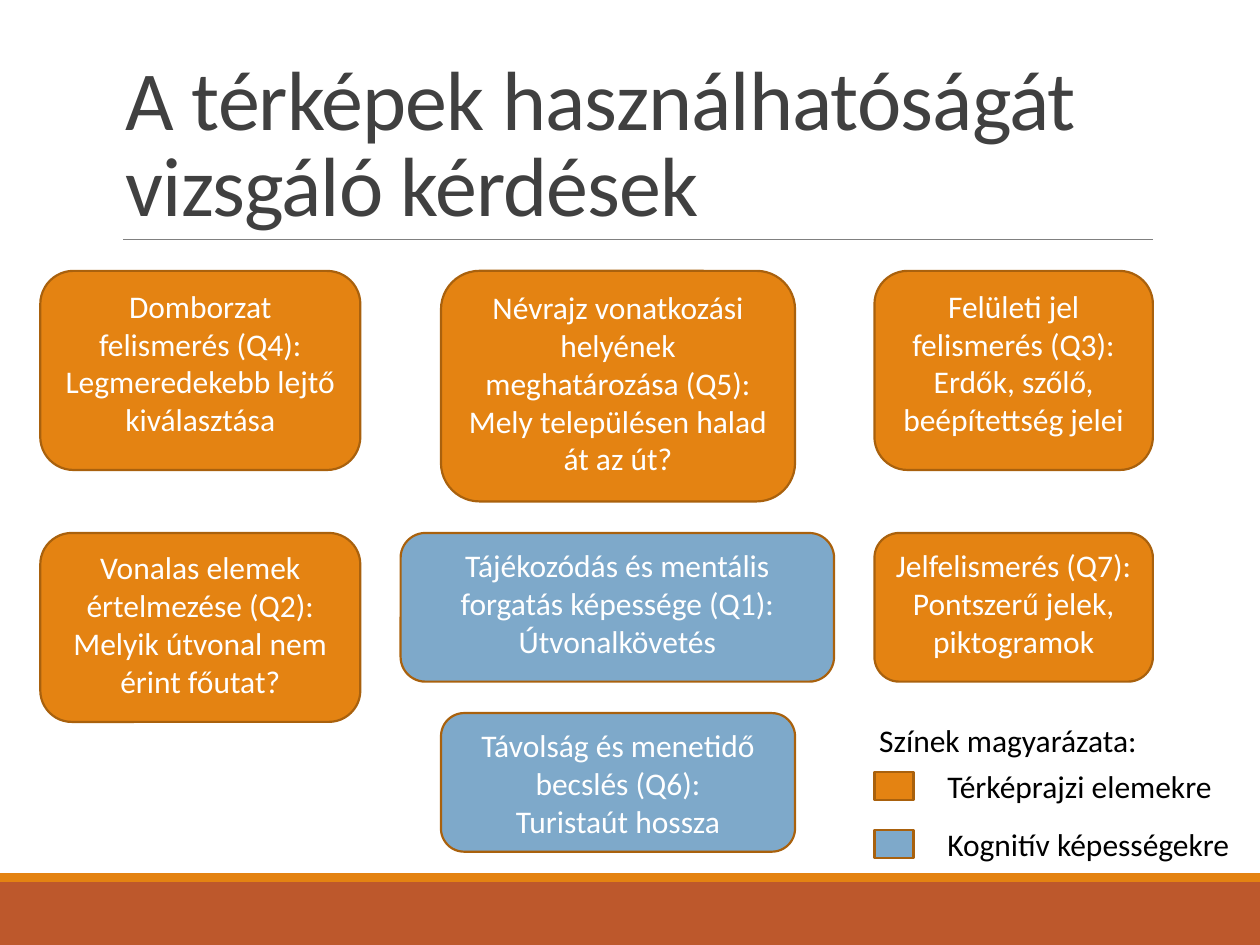
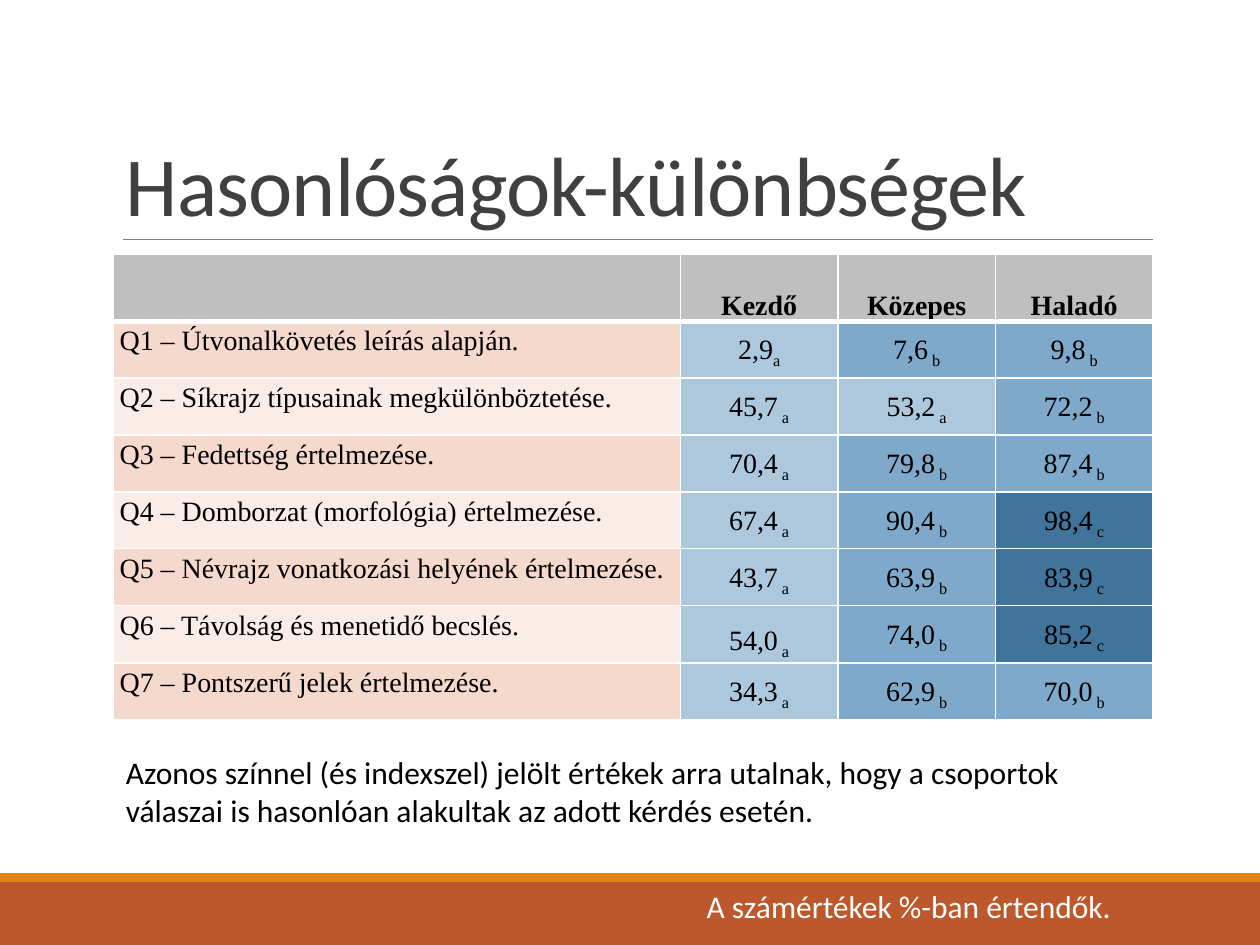
from dataclasses import dataclass

from lxml import etree
from pptx import Presentation
from pptx.dml.color import RGBColor
from pptx.enum.shapes import MSO_CONNECTOR, MSO_SHAPE
from pptx.enum.text import MSO_ANCHOR, MSO_AUTO_SIZE, PP_ALIGN
from pptx.oxml.ns import qn
from pptx.util import Pt

PX = 9144  # 100 px to the inch
RECT, ROUND = MSO_SHAPE.RECTANGLE, MSO_SHAPE.ROUNDED_RECTANGLE
LINE = MSO_CONNECTOR.STRAIGHT
TOP, MID, LOW = MSO_ANCHOR.TOP, MSO_ANCHOR.MIDDLE, MSO_ANCHOR.BOTTOM
LEFT, CENTER = PP_ALIGN.LEFT, PP_ALIGN.CENTER
GROW = MSO_AUTO_SIZE.SHAPE_TO_FIT_TEXT


@dataclass(frozen=True)
class Theme:
    sans: str = "Calibri"
    serif: str = "Times New Roman"
    big: int = 48
    body: int = 18
    cell: int = 16
    white: str = "FFFFFF"
    black: str = "000000"
    title: str = "404040"
    rule: str = "808080"
    rust: str = "BD582C"
    orange: str = "E48312"
    edge: str = "A9610D"
    blue: str = "7EA9CA"
    pale: str = "ADC8DD"
    deep: str = "40749B"
    head: str = "BFBFBF"
    odd: str = "F5D9CC"
    even: str = "FAEDE7"


T = Theme()
MAP, MIND = T.orange, T.blue
GROUPS = {"a": T.pale, "b": T.blue, "c": T.deep}

# left, top, width, height, fill, question, task
COLS = 0, 318, 662
ROWS = 0, 208, 351
CARDS = [
    (COLS[0], ROWS[0], 254, 158, MAP, "Domborzat felismerés (Q4):", "Legmeredekebb lejtő kiválasztása"),
    (COLS[1], ROWS[0], 281, 183, MAP, "Névrajz vonatkozási helyének meghatározása (Q5):",
     "Mely településen halad át az út?"),
    (COLS[2], ROWS[0], 221, 158, MAP, "Felületi jel felismerés (Q3):", "Erdők, szőlő, beépítettség jelei"),
    (COLS[0], ROWS[1], 254, 150, MAP, "Vonalas elemek értelmezése (Q2):", "Melyik útvonal nem érint főutat?"),
    (COLS[1] - 32, ROWS[1], 344, 118, MIND, "Tájékozódás és mentális forgatás képessége (Q1):",
     "Útvonalkövetés"),
    (COLS[2], ROWS[1], 221, 118, MAP, "Jelfelismerés (Q7):", "Pontszerű jelek, piktogramok"),
    (COLS[1], ROWS[2], 281, 110, MIND, "Távolság és menetidő becslés (Q6):", "Turistaút hossza"),
]
KEYS = [(MAP, "Térképrajzi elemekre", 232), (MIND, "Kognitív képességekre", 247)]

LEVELS = ["", "Kezdő", "Közepes", "Haladó"]
SCORES = [
    ("Q1 – Útvonalkövetés leírás alapján.", ("2,9", "a"), ("7,6", " b"), ("9,8", " b")),
    ("Q2 – Síkrajz típusainak megkülönböztetése.", ("45,7", " a"), ("53,2", " a"), ("72,2", " b")),
    ("Q3 – Fedettség értelmezése.", ("70,4", " a"), ("79,8", " b"), ("87,4", " b")),
    ("Q4 – Domborzat (morfológia) értelmezése.", ("67,4", " a"), ("90,4", " b"), ("98,4", " c")),
    ("Q5 – Névrajz vonatkozási helyének értelmezése.", ("43,7", " a"), ("63,9", " b"), ("83,9", " c")),
    ("Q6 – Távolság és menetidő becslés.", ("54,0", " a"), ("74,0", " b"), ("85,2", " c")),
    ("Q7 – Pontszerű jelek értelmezése.", ("34,3", " a"), ("62,9", " b"), ("70,0", " b")),
]


def rgb(hue):
    return RGBColor.from_string(hue)


def emu(*sizes):
    return [size * PX for size in sizes]


def style(para, size, hue, font=T.sans, align=LEFT, bold=False):
    para.alignment = align
    for run in para.runs:
        face = run.font
        face.name, face.size, face.bold = font, Pt(size), bold
        face.color.rgb = rgb(hue)


def block(slide, kind, box, fill, edge=None):
    shape = slide.shapes.add_shape(kind, *emu(*box))
    shape.shadow.inherit = False
    shape.fill.solid()
    shape.fill.fore_color.rgb = rgb(fill)
    if edge:
        shape.line.color.rgb = rgb(edge)
        shape.line.width = Pt(1.25)
    else:
        shape.line.fill.background()
    return shape


def label(slide, box, text, hue=T.black, wrap=True):
    frame = slide.shapes.add_textbox(*emu(*box)).text_frame
    frame.word_wrap, frame.auto_size = wrap, GROW
    frame.text = text
    style(frame.paragraphs[0], T.body, hue)


def base(deck, title):
    """Add a slide with the shared bands, rule and title."""
    slide = deck.slides.add_slide(deck.slide_layouts[6])
    block(slide, RECT, (0, 700, 1000, 50), T.rust)
    block(slide, RECT, (0, 693, 1000, 7), T.orange)
    rule = slide.shapes.add_connector(LINE, *emu(98, 190, 915, 190))
    rule.line.color.rgb = rgb(T.rule)
    rule.line.width = Pt(0.5)
    etree.SubElement(rule._element.spPr, qn("a:effectLst"))
    frame = slide.shapes.add_textbox(*emu(90, 31, 825, 159)).text_frame
    frame.word_wrap, frame.vertical_anchor = True, LOW
    frame.text = title
    para = frame.paragraphs[0]
    para.line_spacing = 0.85
    style(para, T.big, T.title)
    para.runs[0]._r.get_or_add_rPr().set("spc", "-50")
    return slide


def cards(slide, left, top):
    for x, y, wide, high, fill, *lines in CARDS:
        shape = block(slide, ROUND, (left + x, top + y, wide, high), fill, T.edge)
        frame = shape.text_frame
        frame.word_wrap, frame.vertical_anchor = True, TOP
        frame.text = "\n".join(lines)
        for para in frame.paragraphs:
            style(para, T.body, T.white, align=CENTER)


def legend(slide, left, top):
    label(slide, (left, top, 227, 40), "Színek magyarázata:", wrap=False)
    for i, (fill, text, wide) in enumerate(KEYS):
        y = top + 37 + 46 * i
        block(slide, RECT, (left + 6, y + 9, 31, 22), fill, T.edge)
        label(slide, (left + 54, y, wide, 40), text, wrap=False)


def border(cell, low):
    """Draw white cell borders, the lower one low points wide."""
    props = cell._tc.get_or_add_tcPr()
    for side, width in zip("LRTB", (1, 1, 1, low)):
        line = etree.SubElement(props, qn(f"a:ln{side}"), w=str(Pt(width)))
        paint = etree.SubElement(line, qn("a:solidFill"))
        etree.SubElement(paint, qn("a:srgbClr"), val=T.white)


def fill_cell(cell, parts, fill, anchor, align, bold=False, low=1, space=1.15):
    """Write a value and, if given, its subscript."""
    border(cell, low)
    cell.fill.solid()
    cell.fill.fore_color.rgb = rgb(fill)
    cell.margin_left = cell.margin_right = 5 * PX
    cell.margin_top = cell.margin_bottom = 0
    cell.vertical_anchor = anchor
    para = cell.text_frame.paragraphs[0]
    para.line_spacing = space
    for part in parts:
        para.add_run().text = part
    style(para, T.cell, T.black, T.serif, align, bold)
    for run in para.runs[1:]:
        run._r.get_or_add_rPr().set("baseline", "-25000")


def results(slide, left, top, wide, high):
    head, side = 53, 125
    count = len(SCORES)
    grid = slide.shapes.add_table(count + 1, len(LEVELS), *emu(left, top, wide, high)).table
    for i, col in enumerate(grid.columns):
        col.width = PX * (side if i else wide - 3 * side)
    for i, row in enumerate(grid.rows):
        row.height = PX * (high - head) // count if i else PX * head
    for i, level in enumerate(LEVELS):
        fill_cell(grid.cell(0, i), [level] if level else [], T.head, LOW, CENTER, True, 3)
    for r, (topic, *values) in enumerate(SCORES, 1):
        fill_cell(grid.cell(r, 0), [topic], T.odd if r % 2 else T.even, TOP, LEFT)
        for c, pair in enumerate(values, 1):
            space = 1.5 if pair[0] == "54,0" else 1.15
            fill_cell(grid.cell(r, c), pair, GROUPS[pair[1].strip()], MID, CENTER, space=space)


def main():
    deck = Presentation()
    deck.slide_width, deck.slide_height = emu(1000, 750)

    slide = base(deck, "A térképek használhatóságát vizsgáló kérdések")
    cards(slide, 32, 215)
    legend(slide, 688, 567)

    slide = base(deck, "Hasonlóságok-különbségek")
    results(slide, 90, 202, 825, 369)
    label(slide, (90, 593, 825, 71), "Azonos színnel (és indexszel) jelölt értékek arra utalnak, "
          "hogy a csoportok válaszai is hasonlóan alakultak az adott kérdés esetén.")
    label(slide, (551, 699, 364, 40), "A számértékek %-ban értendők.", T.white)

    deck.save("out.pptx")


if __name__ == "__main__":
    main()
